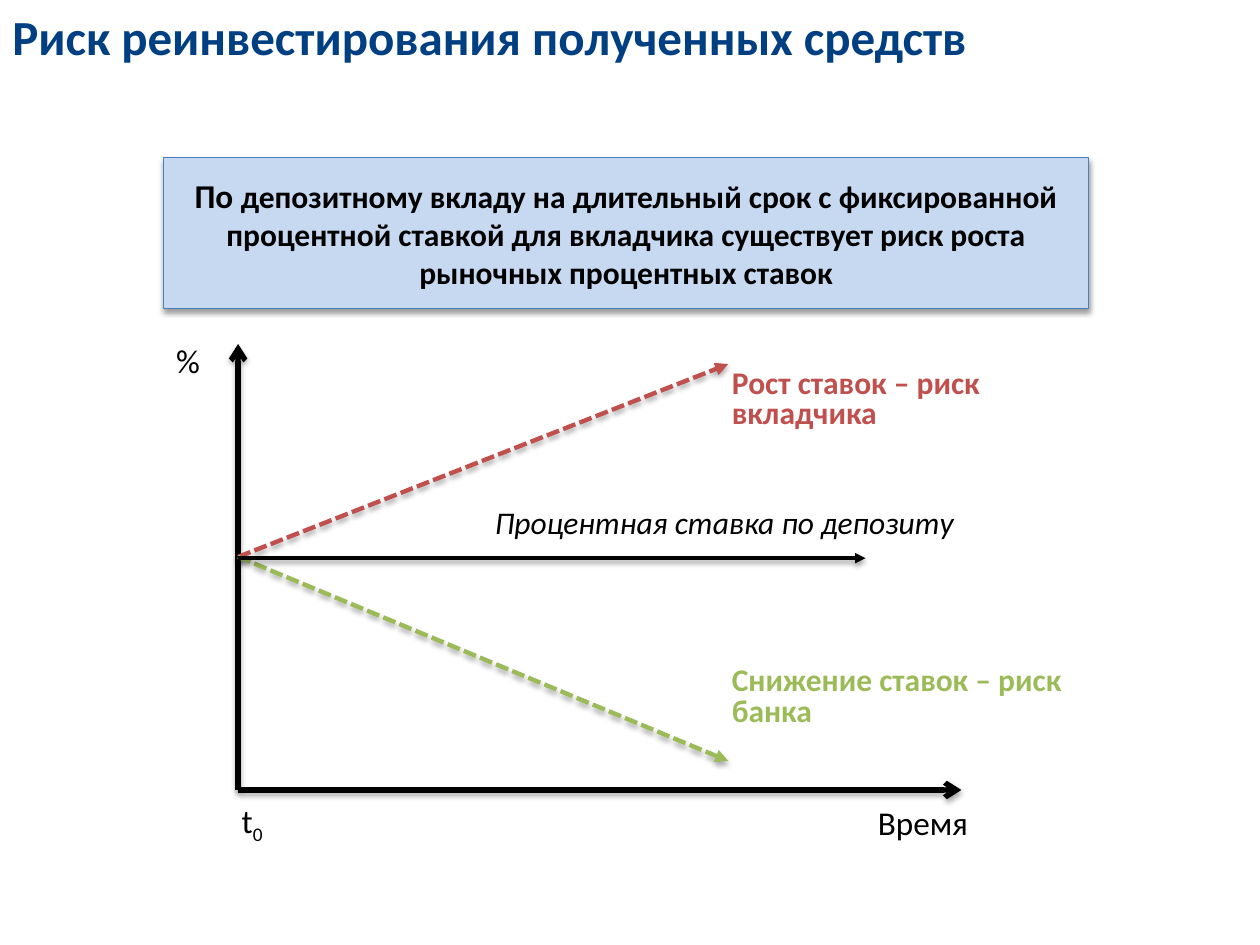
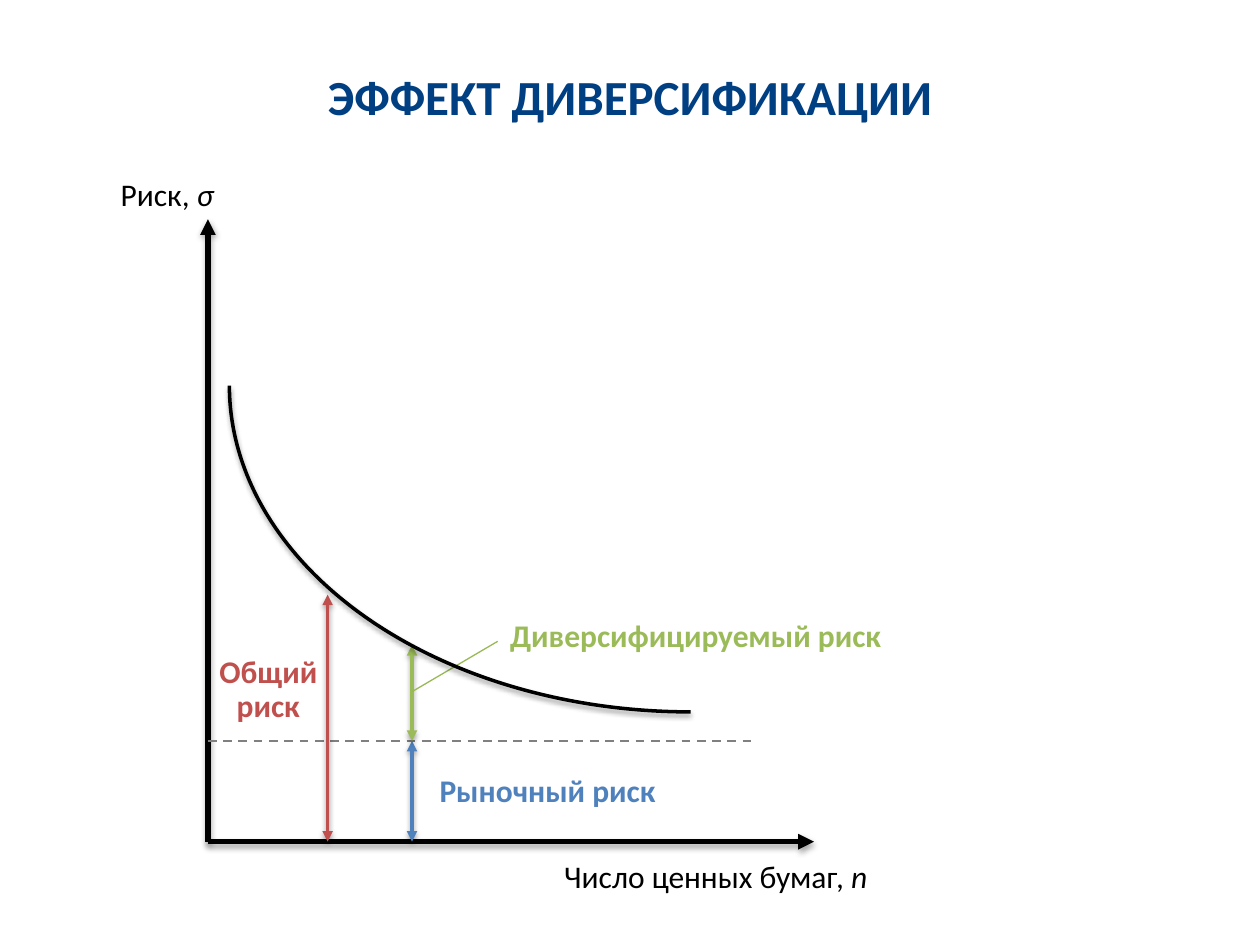
from dataclasses import dataclass

from lxml import etree
from pptx import Presentation
from pptx.dml.color import RGBColor
from pptx.enum.dml import MSO_LINE
from pptx.enum.shapes import MSO_CONNECTOR, MSO_SHAPE
from pptx.enum.text import MSO_ANCHOR, PP_ALIGN
from pptx.oxml.ns import qn
from pptx.util import Inches, Pt

LEFT, CENTER = PP_ALIGN.LEFT, PP_ALIGN.CENTER
TOP, MIDDLE = MSO_ANCHOR.TOP, MSO_ANCHOR.MIDDLE
DASH, SYS_DASH = MSO_LINE.DASH, MSO_LINE.SQUARE_DOT
STRAIGHT = MSO_CONNECTOR.STRAIGHT
RECT, ARC = MSO_SHAPE.RECTANGLE, MSO_SHAPE.ARC

FONT = "Calibri"
COLORS = {
    "title": "003F82", "black": "000000", "red": "C0504D", "green": "9BBB59",
    "blue": "4F81BD", "gray": "808080", "leader": "98B955",
    "panel": "C6D9F1", "panel_line": "4B7EBC",
}


@dataclass
class Line:
    start: tuple[float, float]
    end: tuple[float, float]
    color: str = "black"
    width: float = 2
    dash: MSO_LINE | None = None
    head: str | None = None
    tail: str | None = "triangle"
    shadow: int = 38  # opacity in percent, 0 for none


@dataclass
class Label:
    box: tuple[float, float, float, float]
    runs: list
    color: str = "black"
    size: float = 18
    bold: bool = False
    align: PP_ALIGN = LEFT
    spacing: float = 1.0
    wrap: bool = True


def rgb(name: str) -> RGBColor:
    return RGBColor.from_string(COLORS[name])


def set_shadow(sp, opacity: int) -> None:
    """Soft shadow straight below; an opacity of 0 leaves an empty effect list."""
    spPr = sp._element.spPr
    effects = etree.SubElement(spPr, qn("a:effectLst"))
    if opacity:
        distance = Pt(1.8 if opacity < 38 else 1.6)
        outer = etree.SubElement(effects, qn("a:outerShdw"), blurRad=str(Pt(3.1)),
                                 dist=str(distance), dir="5400000", rotWithShape="0")
        color = etree.SubElement(outer, qn("a:srgbClr"), val=COLORS["black"])
        etree.SubElement(color, qn("a:alpha"), val=str(opacity * 1000))


def write(tf, runs: list, *, color="black", size=18.0, bold=False, align=LEFT,
          spacing=1.0, anchor=TOP, wrap=True, insets=(0.1, 0.05, 0.1, 0.05)) -> None:
    """Each run is a string or a (string, overrides) pair."""
    tf.word_wrap = wrap
    tf.vertical_anchor = anchor
    tf.margin_left, tf.margin_top, tf.margin_right, tf.margin_bottom = map(Inches, insets)
    p = tf.paragraphs[0]
    p.alignment = align
    p.line_spacing = spacing
    for item in runs:
        text, extra = (item, {}) if isinstance(item, str) else item
        r = p.add_run()
        r.text = text
        r.font.name = FONT
        r.font.size = Pt(extra.get("size", size))
        r.font.bold = bold
        r.font.italic = extra.get("italic", False)
        r.font.color.rgb = rgb(color)
        if "baseline" in extra:
            r._r.get_or_add_rPr().set("baseline", str(extra["baseline"] * 1000))


def add_title(s, text: str, top=0.05, align=LEFT) -> None:
    tb = s.shapes.add_textbox(0, 0, Inches(10), Inches(7.5))
    write(tb.text_frame, [text], color="title", size=28, bold=True, align=align,
          insets=(0.1, top, 0.1, 0.05))


def add_label(s, label: Label) -> None:
    tb = s.shapes.add_textbox(*map(Inches, label.box))
    write(tb.text_frame, label.runs, color=label.color, size=label.size,
          bold=label.bold, align=label.align, spacing=label.spacing, wrap=label.wrap)


def add_line(s, line: Line) -> None:
    cx = s.shapes.add_connector(STRAIGHT, *map(Inches, line.start + line.end))
    cx.line.color.rgb = rgb(line.color)
    cx.line.width = Pt(line.width)
    if line.dash:
        cx.line.dash_style = line.dash
    ln = cx._element.spPr.find(qn("a:ln"))
    for tag, kind in (("a:headEnd", line.head), ("a:tailEnd", line.tail)):
        if kind:
            etree.SubElement(ln, qn(tag), type=kind)
    set_shadow(cx, line.shadow)


def add_axes(s, origin: tuple, top: float, right: float, tail: str) -> None:
    for end in ((origin[0], top), (right, origin[1])):
        add_line(s, Line(origin, end, width=3, tail=tail, shadow=35))


def add_preset(s, kind, box: tuple, fill: str | None, line: str, width: float):
    sp = s.shapes.add_shape(kind, *map(Inches, box))
    if fill:
        sp.fill.solid()
        sp.fill.fore_color.rgb = rgb(fill)
    else:
        sp.fill.background()
    sp.line.color.rgb = rgb(line)
    sp.line.width = Pt(width)
    set_shadow(sp, 38)
    return sp


def build_reinvestment(s) -> None:
    add_title(s, "Риск реинвестирования полученных средств")

    # Rate scenarios over time
    axis_x = 1.89
    rate_start = (axis_x, 4.42)
    add_axes(s, (axis_x, 6.27), top=2.73, right=7.63, tail="arrow")
    for color, end_y in (("red", 2.89), ("green", 6.04)):
        add_line(s, Line(rate_start, (5.78, end_y), color, 2.5, SYS_DASH, shadow=35))
    add_line(s, Line((axis_x, 4.43), (6.87, 4.43)))

    labels = [
        Label((1.3, 2.65, 0.49, 0.42), ["%"], size=19),
        Label((6.87, 6.32, 1.23, 0.42), ["Время"], size=19),
        Label((1.82, 6.3, 0.38, 0.42), ["t", ("0", {"baseline": -25})], size=19, wrap=False),
        Label((3.83, 4, 4.57, 0.34), [("Процентная ставка по депозиту", {"italic": True})],
              spacing=0.8),
        Label((5.71, 2.89, 2.42, 0.59), ["Рост ставок – риск вкладчика"], "red",
              bold=True, spacing=0.8),
        Label((5.71, 5.25, 2.96, 0.59), ["Снижение ставок – риск банка"], "green",
              bold=True, spacing=0.8),
    ]
    for label in labels:
        add_label(s, label)

    # Statement panel
    panel = add_preset(s, RECT, (1.3, 1.25, 7.34, 1.2), "panel", "panel_line", 0.75)
    statement = ("депозитному вкладу на длительный срок с фиксированной процентной ставкой "
                 "для вкладчика существует риск роста рыночных процентных ставок")
    write(panel.text_frame, [("По ", {"size": 19}), statement], bold=True,
          align=CENTER, anchor=MIDDLE, insets=(0.12, 0.06, 0.12, 0.06))


def build_diversification(s) -> None:
    add_title(s, "ЭФФЕКТ ДИВЕРСИФИКАЦИИ", top=0.53, align=CENTER)

    # Axes and market risk level
    axis_x, base_y, market_y = 1.65, 6.68, 5.88
    add_axes(s, (axis_x, base_y), top=1.74, right=6.46, tail="triangle")
    add_line(s, Line((axis_x, market_y), (6.01, market_y), "gray", 1.25, DASH,
                     tail=None, shadow=0))

    # Risk spans
    for color, x, bottom, top in (("blue", 3.27, base_y, market_y),
                                  ("green", 3.27, market_y, 5.12),
                                  ("red", 2.6, base_y, 4.72)):
        add_line(s, Line((x, bottom), (x, top), color, head="triangle"))

    labels = [
        Label((0.86, 1.34, 1.1, 0.4), ["Риск, ", ("σ", {"italic": True})]),
        Label((1.56, 5.16, 1.14, 0.65), ["Общий риск"], "red", bold=True,
              align=CENTER, spacing=0.9),
        Label((3.39, 6.07, 2.44, 0.4), ["Рыночный риск"], "blue", bold=True),
        Label((3.95, 4.84, 3.77, 0.4), ["Диверсифицируемый риск"], "green", bold=True),
        Label((4.38, 6.75, 3.33, 0.4), ["Число ценных бумаг, ", ("n", {"italic": True})]),
    ]
    for label in labels:
        add_label(s, label)
    add_line(s, Line((3.27, 5.49), (3.95, 5.09), "leader", 0.75, tail=None, shadow=0))

    # Total risk curve
    curve = add_preset(s, ARC, (1.82, 0.47, 7.32, 5.18), None, "black", 2)
    curve.rotation = 180


def main() -> None:
    prs = Presentation()
    prs.slide_width, prs.slide_height = Inches(10), Inches(7.5)
    for build in (build_reinvestment, build_diversification):
        build(prs.slides.add_slide(prs.slide_layouts[6]))
    prs.save("out.pptx")


if __name__ == "__main__":
    main()
